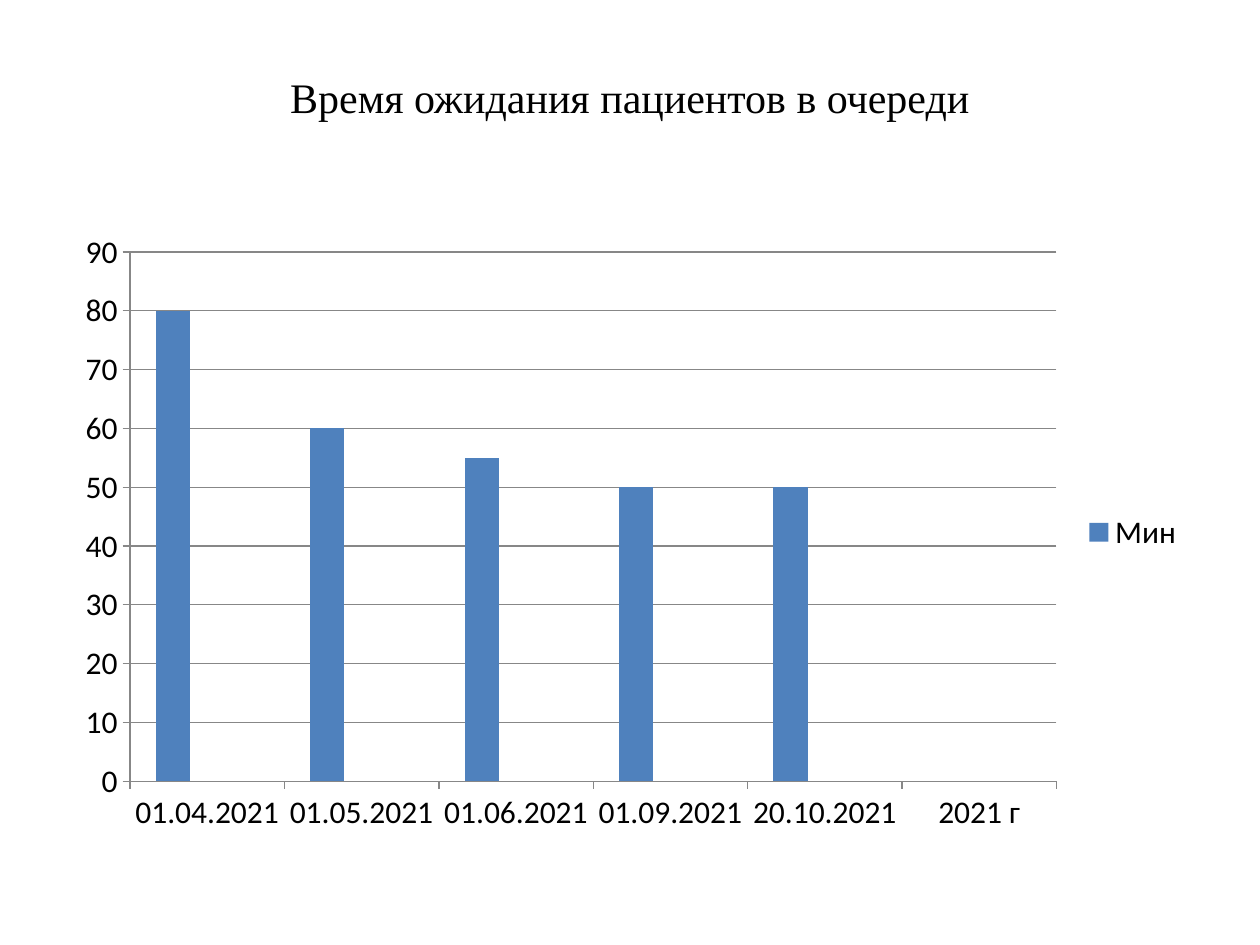
from lxml.etree import SubElement
from pptx import Presentation
from pptx.chart.data import CategoryChartData
from pptx.dml.color import RGBColor
from pptx.enum.chart import XL_CHART_TYPE as ChartType
from pptx.enum.chart import XL_LEGEND_POSITION as LegendPosition
from pptx.enum.chart import XL_TICK_MARK as TickMark
from pptx.enum.text import MSO_ANCHOR as Anchor
from pptx.enum.text import PP_ALIGN as Align
from pptx.oxml.ns import qn
from pptx.util import Inches, Pt

BLACK = RGBColor(0x00, 0x00, 0x00)
GRAY = RGBColor(0x87, 0x87, 0x87)
BLUE = RGBColor(0x4F, 0x81, 0xBD)
RED = RGBColor(0xC0, 0x50, 0x4D)
GREEN = RGBColor(0x9B, 0xBB, 0x59)

DATES = ["01.04.2021", "01.05.2021", "01.06.2021", "01.09.2021", "20.10.2021", "2021 г"]
EMPTY = [None] * len(DATES)
SERIES = [
    ("Мин", [80, 60, 55, 50, 50, None], BLUE),
    ("Series 2", EMPTY, RED),
    ("Series 3", EMPTY, GREEN),
]


def format_font(font, name, size, color=BLACK):
    font.name = name
    font.size = Pt(size)
    font.color.rgb = color


def write_text(shape, text, font="Calibri", size=18, color=BLACK, align=Align.LEFT, anchor=Anchor.TOP):
    frame = shape.text_frame
    frame.word_wrap = True
    frame.vertical_anchor = anchor
    paragraph = frame.paragraphs[0]
    paragraph.alignment = align
    run = paragraph.add_run()
    run.text = text
    format_font(run.font, font, size, color)


def add_title(slide, text):
    title = slide.shapes.title
    title.left, title.top = Inches(0.5), Inches(0.3)
    title.width, title.height = Inches(9), Inches(0.93)
    write_text(title, text, font="Times New Roman", size=24, align=Align.CENTER, anchor=Anchor.MIDDLE)


def format_axis(axis):
    axis.major_tick_mark = TickMark.OUTSIDE
    axis.minor_tick_mark = TickMark.NONE
    axis.format.line.color.rgb = GRAY
    axis.format.line.width = Pt(0.75)


def add_legend(chart, hidden_entries):
    chart.has_legend = True
    legend = chart.legend
    legend.position = LegendPosition.RIGHT
    legend.include_in_layout = False
    previous = legend._element.find(qn("c:legendPos"))
    for index in hidden_entries:
        entry = SubElement(legend._element, qn("c:legendEntry"))
        SubElement(entry, qn("c:idx")).set("val", str(index))
        SubElement(entry, qn("c:delete")).set("val", "1")
        previous.addnext(entry)
        previous = entry


def add_column_chart(slide):
    data = CategoryChartData()
    data.categories = DATES
    for name, values, _ in SERIES:
        data.add_series(name, values)
    chart = slide.shapes.add_chart(
        ChartType.COLUMN_CLUSTERED, Inches(0.5), Inches(1.75), Inches(9), Inches(4.95), data
    ).chart
    chart.has_title = False
    format_font(chart.font, "Calibri", 18)

    plot = chart.plots[0]
    plot.gap_width = 150
    plot.vary_by_categories = False
    for series, (_, _, color) in zip(plot.series, SERIES):
        series.format.fill.solid()
        series.format.fill.fore_color.rgb = color

    format_axis(chart.category_axis)
    value_axis = chart.value_axis
    format_axis(value_axis)
    value_axis.minimum_scale, value_axis.maximum_scale = 0, 90
    value_axis.major_unit = 10
    value_axis.has_major_gridlines = True
    gridline = value_axis.major_gridlines.format.line
    gridline.color.rgb = GRAY
    gridline.width = Pt(0.75)
    add_legend(chart, hidden_entries=[1, 2])


def main():
    presentation = Presentation()
    presentation.slide_width, presentation.slide_height = Inches(10), Inches(7.5)
    slide = presentation.slides.add_slide(presentation.slide_layouts[5])
    add_title(slide, "Время ожидания пациентов в очереди")
    add_column_chart(slide)
    presentation.save("out.pptx")


if __name__ == "__main__":
    main()
